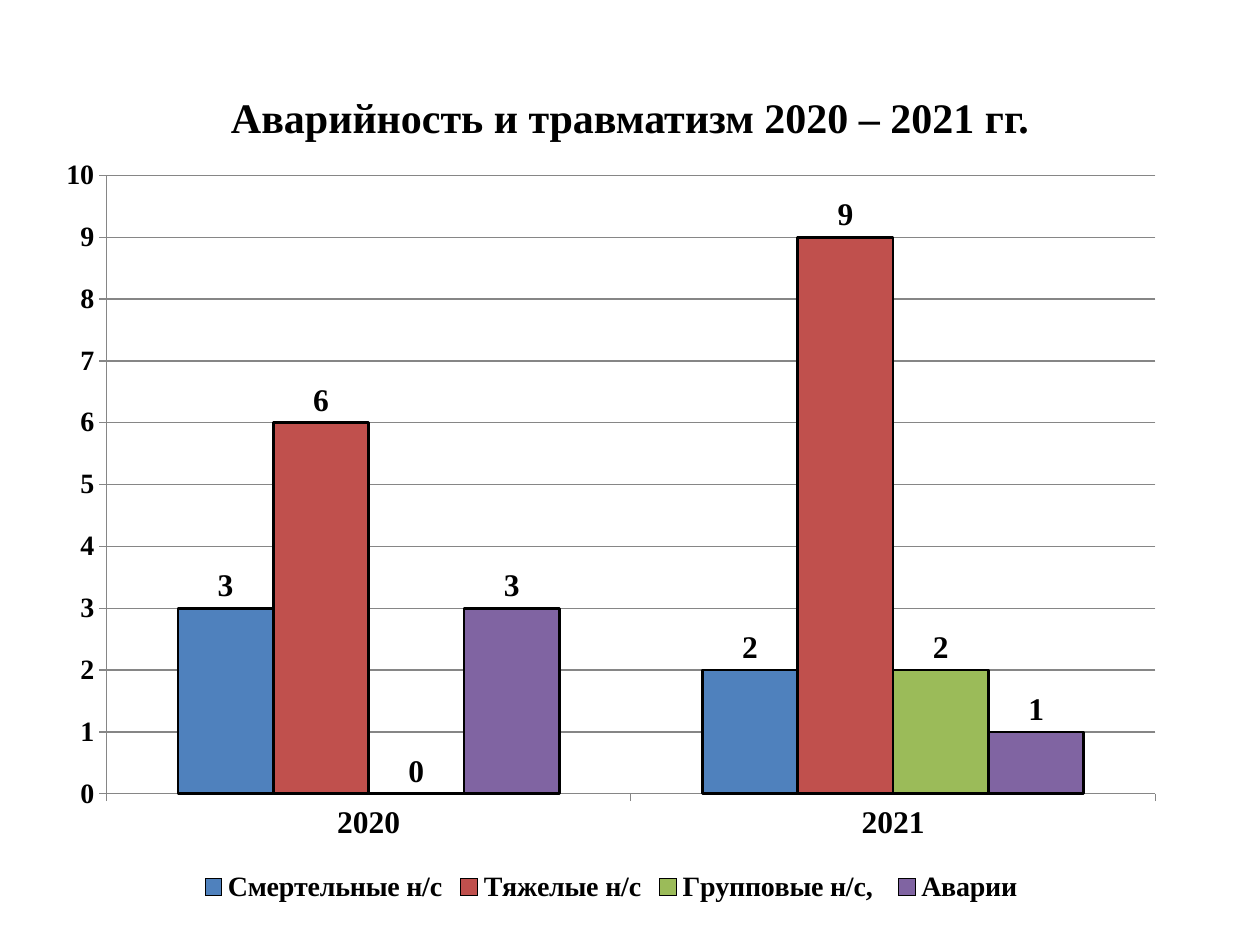
from lxml.etree import SubElement
from pptx import Presentation
from pptx.chart.data import CategoryChartData
from pptx.dml.color import RGBColor
from pptx.enum.chart import XL_CHART_TYPE, XL_LABEL_POSITION, XL_LEGEND_POSITION, XL_TICK_MARK
from pptx.enum.text import MSO_ANCHOR, PP_ALIGN
from pptx.oxml.ns import qn
from pptx.util import Inches, Pt


def color(value):
    return RGBColor.from_string(value)


def set_font(font, size, name="Times New Roman", bold=True):
    values = {"size": Pt(size), "name": name, "bold": bold}
    for attribute, value in values.items():
        setattr(font, attribute, value)
    font.color.rgb = color("000000")


presentation = Presentation()
presentation.slide_width = Inches(10)
presentation.slide_height = Inches(7.5)
slide = presentation.slides.add_slide(presentation.slide_layouts[6])

title = slide.shapes.add_textbox(Inches(0.5), Inches(0.3), Inches(9), Inches(1.25))
title.text_frame.word_wrap = True
title.text_frame.vertical_anchor = MSO_ANCHOR.MIDDLE
paragraph = title.text_frame.paragraphs[0]
paragraph.alignment = PP_ALIGN.CENTER
run = paragraph.add_run()
run.text = "Аварийность и травматизм 2020 – 2021 гг."
set_font(run.font, 24)

accidents = [
    ("Смертельные н/с", (3, 2), "4F81BD"),
    ("Тяжелые н/с", (6, 9), "C0504D"),
    ("Групповые н/с, ", (0, 2), "9BBB59"),
    ("Аварии", (3, 1), "8064A2"),
]
chart_data = CategoryChartData()
chart_data.categories = ["2020", "2021"]
for name, values, fill in accidents:
    chart_data.add_series(name, values)

chart = slide.shapes.add_chart(
    XL_CHART_TYPE.COLUMN_CLUSTERED,
    Inches(0.35), Inches(1.15), Inches(9), Inches(6.06), chart_data,
).chart
set_font(chart.font, 18, "Calibri", False)
chart.has_title = False
chart.has_legend = True
chart.legend.position = XL_LEGEND_POSITION.BOTTOM
chart.legend.include_in_layout = False
set_font(chart.legend.font, 16)

for axis, size in ((chart.category_axis, 18), (chart.value_axis, 16)):
    axis.major_tick_mark = XL_TICK_MARK.OUTSIDE
    axis.minor_tick_mark = XL_TICK_MARK.NONE
    axis.format.line.color.rgb = color("868686")
    axis.format.line.width = Pt(0.75)
    set_font(axis.tick_labels.font, size)

value_axis = chart.value_axis
scale = {"minimum_scale": 0, "maximum_scale": 10, "major_unit": 1, "has_major_gridlines": True}
for attribute, value in scale.items():
    setattr(value_axis, attribute, value)
value_axis.major_gridlines.format.line.color.rgb = color("868686")
value_axis.major_gridlines.format.line.width = Pt(0.75)

plot = chart.plots[0]
plot.gap_width = 150
plot.overlap = 0
plot.vary_by_categories = False
for series, (name, values, fill) in zip(plot.series, accidents):
    series.invert_if_negative = False
    series.format.fill.solid()
    series.format.fill.fore_color.rgb = color(fill)
    series.format.line.color.rgb = color("000000")
    series.format.line.width = Pt(1.5)
    labels = series.data_labels
    labels.show_value = True
    labels.position = XL_LABEL_POSITION.OUTSIDE_END
    set_font(labels.font, 18)

plot_area = chart.element.find(".//" + qn("c:plotArea"))
for layout in plot_area.findall(qn("c:layout")):
    plot_area.remove(layout)
layout = SubElement(plot_area, qn("c:layout"))
plot_area.insert(0, layout)
manual_layout = SubElement(layout, qn("c:manualLayout"))
placement = {
    "layoutTarget": "inner", "xMode": "edge", "yMode": "edge",
    "x": 0.055, "y": 0.04, "w": 0.925, "h": 0.81,
}
for tag, value in placement.items():
    SubElement(manual_layout, qn("c:" + tag)).set("val", str(value))

presentation.save("out.pptx")
